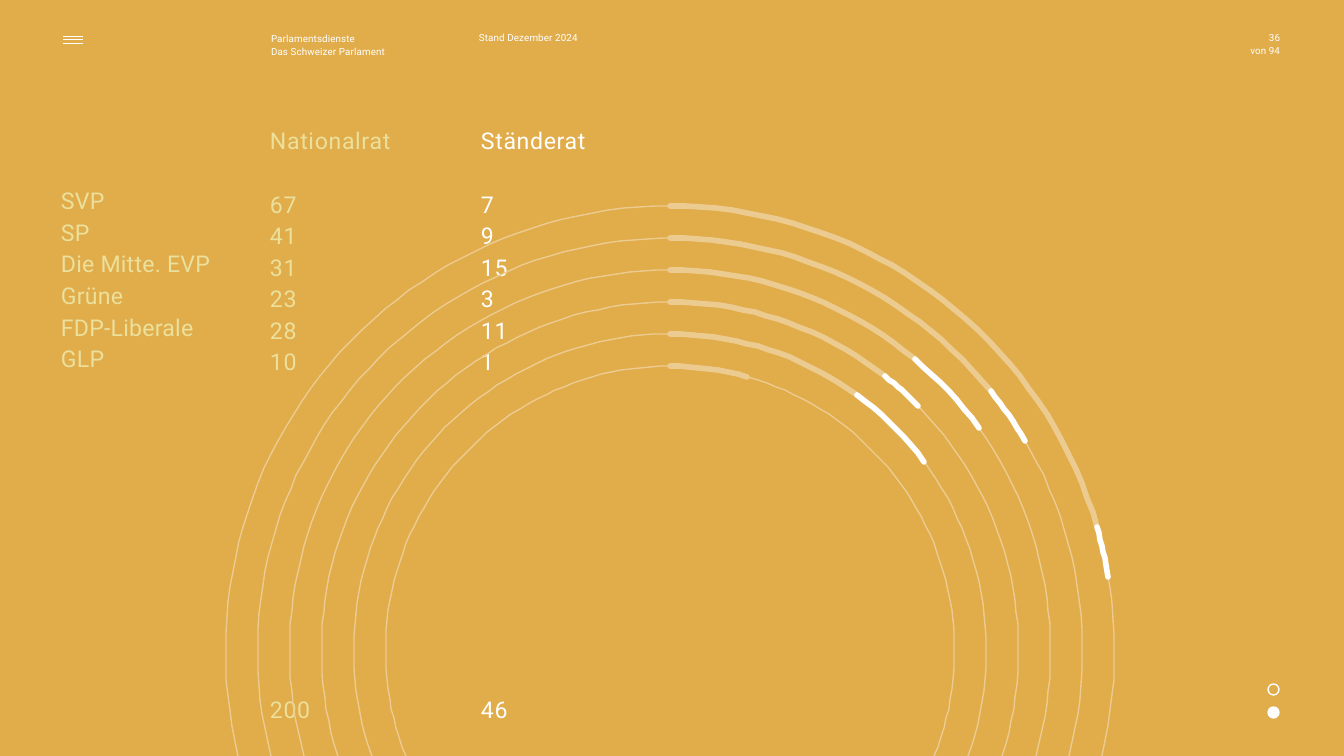
from math import asin, cos, degrees, radians, sin

from lxml import etree
from pptx import Presentation
from pptx import util as u
from pptx.dml.color import RGBColor
from pptx.enum import shapes, text
from pptx.oxml.ns import qn

PX = 914400 / 100.8
W, H = 1344, 756
COL = {"back": "E1AC4A", "white": "FFFFFF", "lime": "EBE09C", "sand": "ECCB90"}
RGB = {k: RGBColor.from_string(v) for k, v in COL.items()}


def write(x, y, w, h, lines, size, col, spc, lead=1.0, gaps={}, align="LEFT"):
    box = slide.shapes.add_textbox(*[round(n * PX) for n in (x, y, w, h)])
    frame = box.text_frame
    frame.word_wrap = True
    frame.margin_left = frame.margin_right = 0
    frame.margin_top = frame.margin_bottom = 0
    frame.text = "\n".join(lines)
    for i, p in enumerate(frame.paragraphs):
        p.alignment = getattr(text.PP_ALIGN, align)
        p.line_spacing = lead
        if i in gaps:
            p.space_before = u.Pt(gaps[i])
        p.font.name = "Roboto"
        p.font.size = u.Pt(size)
        p.font.color.rgb = RGB[col]
        p.font._rPr.set("spc", str(spc))


def sweep(r, a, b, col, width):
    """Draw an arc; degrees run clockwise from the top."""
    steps = max(8, round((b - a) / 2))
    turns = [radians(a + (b - a) * i / steps) for i in range(steps + 1)]
    pts = [(MID_X + r * sin(t), MID_Y - r * cos(t)) for t in turns]
    path = slide.shapes.build_freeform(*pts[0], scale=PX)
    path.add_line_segments(pts[1:], close=False)
    arc = path.convert_to_shape()
    arc.shadow.inherit = False
    arc.fill.background()
    arc.line.color.rgb = RGB[col]
    arc.line.width = u.Pt(width)
    ln = arc.line._get_or_add_ln()
    ln.set("cap", "rnd")
    etree.SubElement(ln, qn("a:round"))


deck = Presentation()
deck.slide_width, deck.slide_height = round(W * PX), round(H * PX)
slide = deck.slides.add_slide(deck.slide_layouts[6])
slide.background.fill.solid()
slide.background.fill.fore_color.rgb = RGB["back"]

# Menu sign
for y in (36, 39, 43):
    bar = slide.shapes.add_connector(
        shapes.MSO_CONNECTOR.STRAIGHT, *[round(n * PX) for n in (63, y, 83, y)])
    bar.line.color.rgb = RGB["white"]
    bar.line.width = u.Pt(0.4)
    etree.SubElement(bar._element.spPr, qn("a:effectLst"))

# Page header
write(271, 32, 131, 26, ["Parlamentsdienste", "Das Schweizer Parlament"],
      7, "white", 10, 1.1)
write(479, 32, 122, 12, ["Stand Dezember 2024"], 7, "white", 10)
for y, note in ((32, "36"), (45, "von 94")):
    write(1236, y, 44, 12, [note], 7, "white", 10, align="RIGHT")

# Seats: party, both councils, end angles of the two bold arcs
seats = [
    ("SVP", 67, 7, 73.9, 80.5),
    ("SP", 41, 9, 51, 59.4),
    ("Die Mitte. EVP", 31, 15, 40, 54.2),
    ("Grüne", 23, 3, 38.1, 45.4),
    ("FDP-Liberale", 28, 11, 36.3, 53.4),
    ("GLP", 10, 1, 15.7, None),
]
write(61, 183, 190, 234, [s[0] for s in seats], 16.5, "lime", 20, 1.14)
for x, head, k, col in ((270, "Nationalrat", 1, "lime"),
                        (481, "Ständerat", 2, "white")):
    nums = [s[k] for s in seats]
    write(x, 123, 190, 620, [head, *map(str, nums), str(sum(nums))],
          16.5, col, 50, 1.14, {1: 22.6, 7: 225.7})

# Rings, cut off at the foot of the slide
MID_X, MID_Y = 670, 650.5
radii = [444.5 - 32 * i for i in range(len(seats))]
for r in radii:
    end = 90 + degrees(asin((H - MID_Y) / r))
    sweep(r, -end, end, "sand", 1)

# Bold arcs
for r, (*_, first, last) in zip(radii, seats):
    sweep(r, 0, first, "sand", 4)
    if last:
        sweep(r, first, last, "white", 4)

# Page dots
for y, full in ((684, False), (707, True)):
    dot = slide.shapes.add_shape(
        shapes.MSO_SHAPE.OVAL, *[round(n * PX) for n in (1268, y, 11, 11)])
    dot.shadow.inherit = False
    dot.line.color.rgb = RGB["white"]
    dot.line.width = u.Pt(1)
    if full:
        dot.fill.solid()
        dot.fill.fore_color.rgb = RGB["white"]
    else:
        dot.fill.background()

deck.save("out.pptx")
